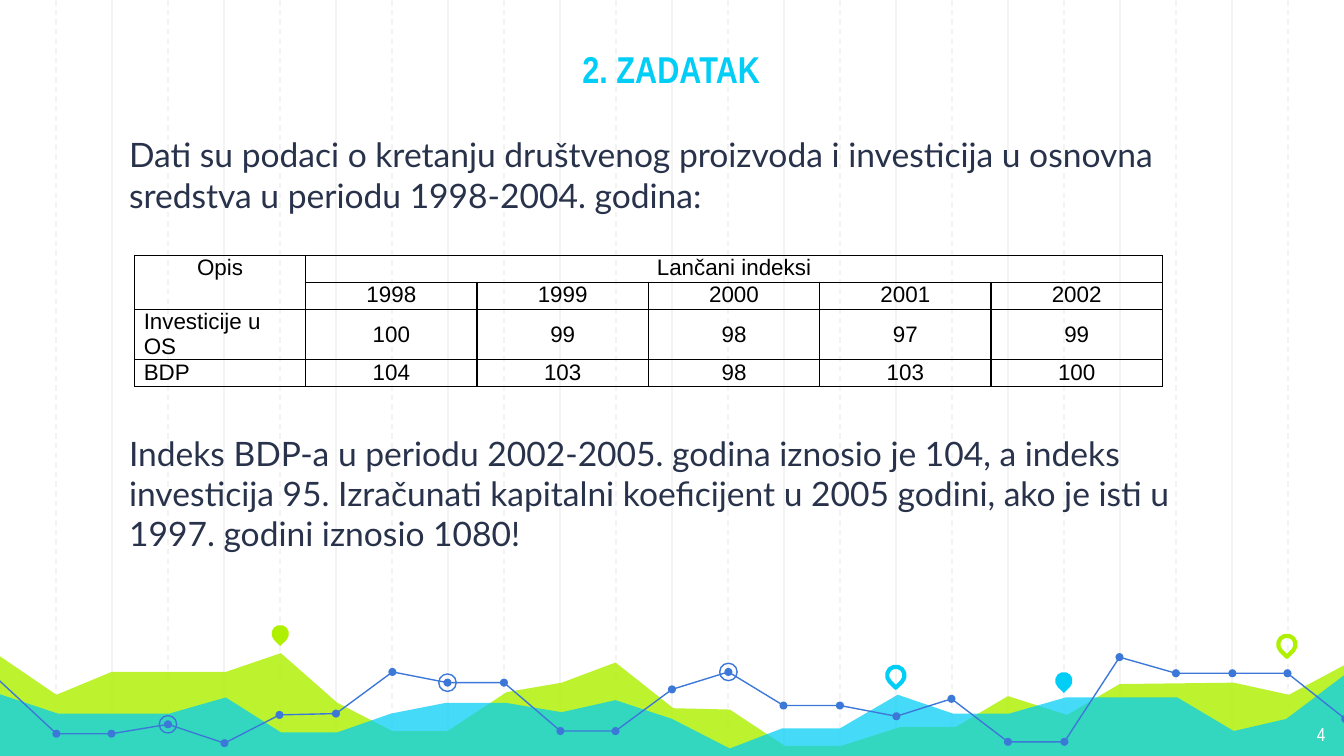
from lxml import etree
from pptx import Presentation
from pptx.dml.color import RGBColor
from pptx.enum.dml import MSO_LINE_DASH_STYLE as Dash
from pptx.enum.shapes import MSO_CONNECTOR as Connector, MSO_SHAPE as Shape
from pptx.enum.text import MSO_ANCHOR as Anchor, MSO_AUTO_SIZE as AutoSize, PP_ALIGN as Align
from pptx.oxml import parse_xml
from pptx.oxml.ns import nsdecls, qn
from pptx.util import Inches, Pt

COLORS = {"grid": "F3F3F3", "lime": "AFF000", "cyan": "00CEF6", "blue": "3C78D8",
          "text": "28324A", "white": "FFFFFF", "black": "000000"}
WIDTH = 10
HEIGHT = WIDTH * 9 / 16
GRID_STEP = WIDTH / 24

LIME_AREA = [(-0.02, 4.87), (0.42, 5.17), (0.83, 5), (1.68, 5), (2.09, 4.86), (2.51, 5.23),
             (2.92, 5.44), (3.33, 5.44), (3.77, 5.15), (4.18, 5.08), (4.58, 4.93), (5.01, 5.27),
             (5.43, 5.28), (5.84, 5.55), (6.26, 5.55), (6.7, 5.41), (7.11, 5.41), (7.5, 5.18),
             (7.94, 5.32), (8.33, 5.09), (9.18, 5.08), (9.59, 5.17), (10.02, 4.94),
             (10.01, 5.64), (-0.03, 5.64)]
CYAN_AREA = [(-0.02, 5.16), (0.43, 5.31), (1.26, 5.31), (1.68, 5.19), (2.09, 5.45), (2.51, 5.45),
             (2.91, 5.31), (3.32, 5.23), (3.76, 5.23), (4.18, 5.3), (4.58, 5.21), (5, 5.35),
             (5.43, 5.57), (5.82, 5.42), (6.25, 5.42), (6.68, 5.17), (7.09, 5.31), (7.51, 5.31),
             (7.93, 5.19), (8.76, 5.19), (9.18, 5.44), (9.57, 5.35), (10.02, 5.01),
             (10.02, 5.65), (-0.03, 5.65)]
TREND_LINES = [
    [(-0.01, 5.06), (0.42, 5.46), (0.83, 5.46), (1.25, 5.39), (1.67, 5.53), (2.08, 5.32),
     (2.5, 5.31), (2.92, 5), (3.33, 5.08), (3.75, 5.08), (4.17, 5.44), (4.58, 5.44)],
    [(4.58, 5.44), (5, 5.13), (5.42, 5), (5.83, 5.25), (6.25, 5.25), (6.67, 5.33),
     (7.08, 5.2), (7.5, 5.52), (7.92, 5.52), (8.33, 4.89)],
    [(8.33, 4.89), (8.75, 5.01), (9.17, 5.01), (9.58, 5.01), (10.01, 5.35)],
]
RINGS = [(3.33, 5.08), (1.25, 5.39), (5.42, 5)]
PINS = [(2.02, 4.65, "lime", True), (6.6, 4.96, "cyan", False),
        (7.85, 5, "cyan", True), (9.51, 4.73, "lime", False)]
TABLE_ROWS = [["Opis", "Lančani indeksi", "", "", "", ""],
              ["", "1998", "1999", "2000", "2001", "2002"],
              ["Investicije u OS", "100", "99", "98", "97", "99"],
              ["BDP", "104", "103", "98", "103", "100"]]
ROW_HEIGHTS = [0.2, 0.2, 0.37, 0.2]
PARAGRAPHS = [
    "Dati su podaci o kretanju društvenog proizvoda i investicija u osnovna sredstva "
    "u periodu 1998-2004. godina:",
    "Indeks BDP-a u periodu 2002-2005. godina iznosio je 104, a indeks investicija 95. "
    "Izračunati kapitalni koeficijent u 2005 godini, ako je isti u 1997. godini iznosio 1080!",
]


class SlideBuilder:
    def __init__(self, slide):
        self.slide = slide
        self.shapes = slide.shapes

    def color(self, name):
        return RGBColor.from_string(COLORS[name])

    def style_font(self, font, name, size, color, bold=False):
        font.name, font.size, font.bold = name, Pt(size), bold
        font.color.rgb = self.color(color)

    def style_shape(self, shape, fill=None, line=None, weight=0.75):
        shape.shadow.inherit = False
        if fill:
            shape.fill.solid()
            shape.fill.fore_color.rgb = self.color(fill)
        else:
            shape.fill.background()
        if line:
            shape.line.color.rgb = self.color(line)
            shape.line.width = Pt(weight)
        else:
            shape.line.fill.background()

    def grid_line(self, x, dashed):
        line = self.shapes.add_connector(Connector.STRAIGHT, Inches(x), 0, Inches(x), Inches(HEIGHT))
        line.line.color.rgb = self.color("grid")
        line.line.width = Pt(0.75)
        if dashed:
            line.line.dash_style = Dash.DASH
        etree.SubElement(line._element.spPr, qn("a:effectLst"))

    def outline(self, points, closed):
        start, *rest = [(Inches(x), Inches(y)) for x, y in points]
        builder = self.shapes.build_freeform(*start)
        builder.add_line_segments(rest, close=closed)
        return builder.convert_to_shape()

    def area(self, points, color, opacity):
        shape = self.outline(points, True)
        self.style_shape(shape, fill=color)
        fill_color = shape._element.spPr.find(qn("a:solidFill"))[0]
        etree.SubElement(fill_color, qn("a:alpha"), val=str(opacity * 1000))

    def trend(self, points):
        self.style_shape(self.outline(points, False), line="blue")

    def circle(self, center, diameter, **style):
        left, top = (Inches(value - diameter / 2) for value in center)
        shape = self.shapes.add_shape(Shape.OVAL, left, top, Inches(diameter), Inches(diameter))
        self.style_shape(shape, **style)

    def pin(self, left, top, color, filled):
        shape = self.shapes.add_shape(Shape.TEAR, Inches(left), Inches(top), Inches(0.13), Inches(0.13))
        shape.adjustments[0] = 1
        shape.rotation = 135
        style = {"fill": color} if filled else {"line": color, "weight": 2.25}
        self.style_shape(shape, **style)

    def frame(self, shape, left, top, width, height, anchor=Anchor.TOP):
        shape.left, shape.top = Inches(left), Inches(top)
        shape.width, shape.height = Inches(width), Inches(height)
        frame = shape.text_frame
        frame.word_wrap, frame.auto_size = True, AutoSize.NONE
        frame.vertical_anchor = anchor
        frame.margin_left = frame.margin_right = Inches(0.1)
        frame.margin_top = frame.margin_bottom = Inches(0.1)
        self.shapes._spTree.append(shape._element)
        return frame

    def title(self, text):
        frame = self.frame(self.shapes.title, 1.17, 0, 7.65, 0.78, Anchor.BOTTOM)
        frame.text = text
        paragraph = frame.paragraphs[0]
        paragraph.alignment = Align.CENTER
        self.style_font(paragraph.font, "Arial Narrow", 20, "cyan", True)

    def body(self, texts, gap):
        frame = self.frame(self.slide.placeholders[1], 0.74, 0.9, 8.5, 3.33)
        frame.text = "\n".join(texts)
        for index, paragraph in enumerate(frame.paragraphs):
            properties = paragraph._p.get_or_add_pPr()
            properties.set("marL", str(Inches(0.12)))
            properties.set("indent", "0")
            etree.SubElement(properties, qn("a:buNone"))
            paragraph.space_before = Pt(gap if index else 0)
            self.style_font(paragraph.font, "Lato", 18, "text")

    def page_number(self, text):
        box = self.shapes.add_textbox(0, 0, 0, 0)
        frame = self.frame(box, 9.36, 5.28, 0.6, 0.35)
        frame.text = text
        paragraph = frame.paragraphs[0]
        paragraph.alignment = Align.RIGHT
        self.style_font(paragraph.font, "Arial Narrow", 10, "white")

    def cell(self, cell, text, align, anchor):
        cell.margin_left = cell.margin_right = Inches(0.07)
        cell.margin_top = cell.margin_bottom = 0
        cell.vertical_anchor = anchor
        for side in "LRTB":
            cell._tc.get_or_add_tcPr().append(parse_xml(
                f'<a:ln{side} {nsdecls("a")} w="{Pt(0.75)}"><a:solidFill>'
                f'<a:srgbClr val="{COLORS["black"]}"/></a:solidFill></a:ln{side}>'))
        cell.fill.background()
        cell.text = text
        paragraph = cell.text_frame.paragraphs[0]
        paragraph.alignment = align
        self.style_font(paragraph.font, "Arial", 12, "black")

    def table(self, rows, heights, left, top, width):
        table = self.shapes.add_table(len(rows), len(rows[0]), Inches(left), Inches(top),
                                      Inches(width), Inches(sum(heights))).table
        table.first_row = table.horz_banding = False
        for row_index, (texts, height) in enumerate(zip(rows, heights)):
            table.rows[row_index].height = Inches(height)
            header = row_index < 2
            for column, text in enumerate(texts):
                align = Align.CENTER if header or column else Align.LEFT
                anchor = Anchor.TOP if header else Anchor.MIDDLE
                self.cell(table.cell(row_index, column), text, align, anchor)
        table.cell(0, 0).merge(table.cell(1, 0))
        table.cell(0, 1).merge(table.cell(0, len(rows[0]) - 1))


def main():
    presentation = Presentation()
    presentation.slide_width, presentation.slide_height = Inches(WIDTH), Inches(HEIGHT)
    builder = SlideBuilder(presentation.slides.add_slide(presentation.slide_layouts[1]))
    for index in range(1, 24):
        builder.grid_line(index * GRID_STEP, dashed=index % 2 == 1)
    builder.area(LIME_AREA, "lime", 82)
    builder.area(CYAN_AREA, "cyan", 73)
    for points in TREND_LINES:
        builder.trend(points)
        for point in points[1:]:
            builder.circle(point, 0.06, fill="blue")
    for center in RINGS:
        builder.circle(center, 0.13, line="blue")
    for pin in PINS:
        builder.pin(*pin)
    builder.page_number("4")
    builder.body(PARAGRAPHS, gap=116.5)
    builder.title("2. ZADATAK")
    builder.table(TABLE_ROWS, ROW_HEIGHTS, 1, 1.9, 7.65)
    presentation.save("out.pptx")


if __name__ == "__main__":
    main()
